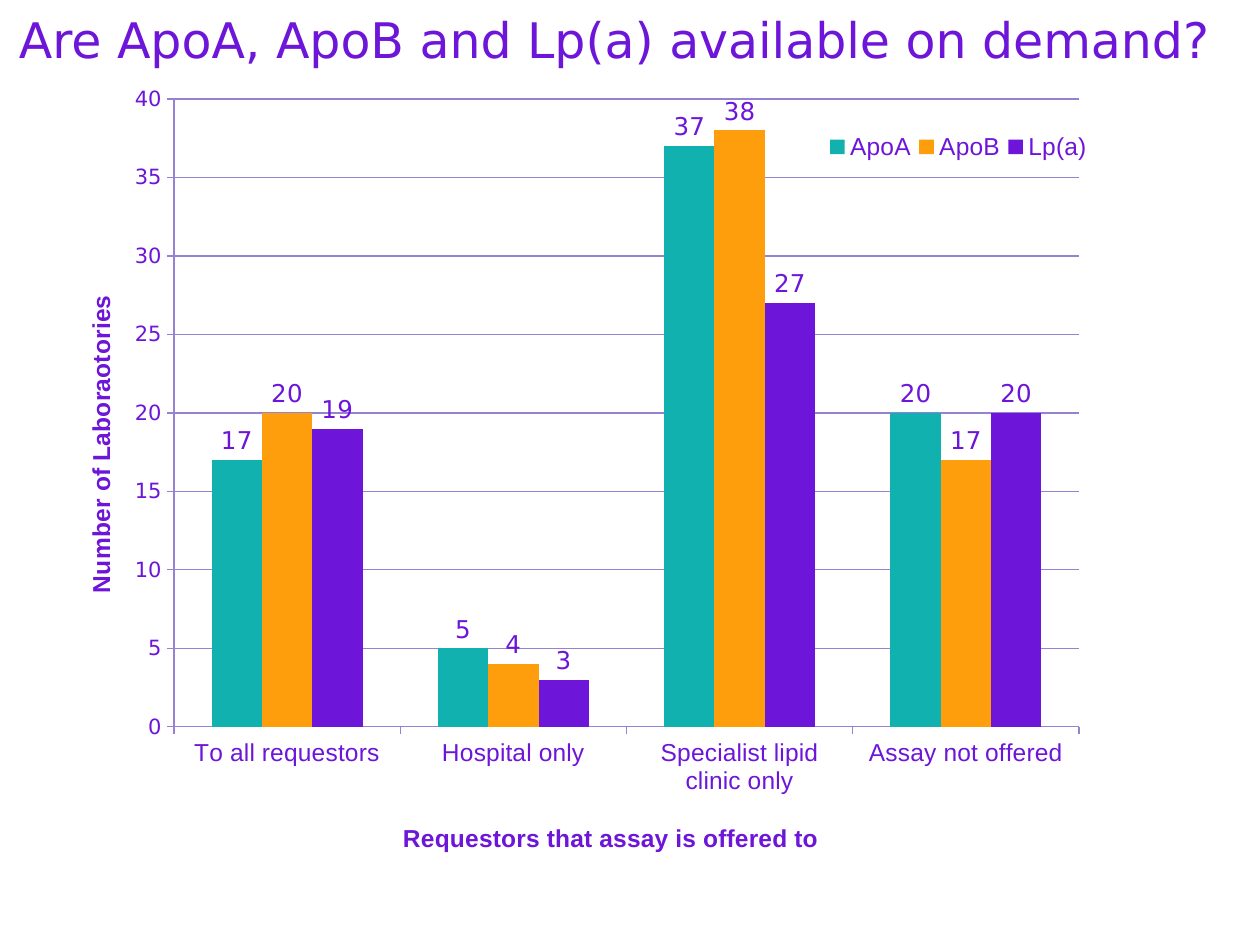
from lxml import etree
from pptx import Presentation
from pptx import util as u
from pptx.chart import data
from pptx.dml.color import RGBColor
from pptx.enum import chart as ch, text
from pptx.oxml.ns import qn

PURPLE, TEAL, ORANGE, GRID = "6D15D8", "10B1AE", "FF9E0C", "9582D3"


def rgb(value):
    return RGBColor.from_string(value)


def place(parent, **values):
    """Give a chart part a manual position, as fractions of the chart."""
    layout = parent.get_or_add_layout() if hasattr(parent, "get_or_add_layout") else parent.find(qn("c:layout"))
    if layout is None:
        layout = etree.Element(qn("c:layout"))
        before = [e for e in parent if e.tag in (qn("c:tx"), qn("c:legendPos"))]
        parent.insert(len(before), layout)
    for child in list(layout):
        layout.remove(child)
    manual = etree.SubElement(layout, qn("c:manualLayout"))
    for name, value in values.items():
        etree.SubElement(manual, qn("c:" + name)).set("val", str(value))


class Deck:
    body, label = "DejaVu Sans", "Arial"

    def __init__(self, width, height):
        self.prs = Presentation()
        self.prs.slide_width, self.prs.slide_height = u.Pt(width), u.Pt(height)
        self.s = self.prs.slides.add_slide(self.prs.slide_layouts[6])

    def font(self, f, size, name=None, bold=False):
        for key, value in dict(size=u.Pt(size), name=name or self.body, bold=bold).items():
            setattr(f, key, value)
        f.color.rgb = rgb(PURPLE)

    def title(self, words, *box):
        tf = self.s.shapes.add_textbox(*map(u.Pt, box)).text_frame
        style = dict(margin_left=0, margin_top=0, margin_right=0, margin_bottom=0,
                     word_wrap=True, vertical_anchor=text.MSO_ANCHOR.TOP)
        for key, value in style.items():
            setattr(tf, key, value)
        p = tf.paragraphs[0]
        p.line_spacing = 0.92
        r = p.add_run()
        r.text = words
        self.font(r.font, 28)

    def axis(self, axis, words, size, name, x, y):
        axis.major_tick_mark = ch.XL_TICK_MARK.OUTSIDE
        axis.format.line.color.rgb = rgb(GRID)
        axis.format.line.width = u.Pt(0.75)
        self.font(axis.tick_labels.font, size, name)
        tf = axis.axis_title.text_frame
        tf.text = words
        self.font(tf.paragraphs[0].runs[0].font, 14, self.label, True)
        place(axis.axis_title._element, xMode="edge", yMode="edge", x=x, y=y)

    def columns(self, cats, series, *box):
        cd = data.CategoryChartData()
        cd.categories = cats
        for name, values, _ in series:
            cd.add_series(name, values)
        c = self.s.shapes.add_chart(ch.XL_CHART_TYPE.COLUMN_CLUSTERED, *map(u.Pt, box), cd).chart
        c.has_title = False
        self.font(c.font, 12)

        # Columns and their values
        plot = c.plots[0]
        for key, value in dict(gap_width=150, overlap=0, vary_by_categories=False).items():
            setattr(plot, key, value)
        for ser, (_, _, colour) in zip(plot.series, series):
            ser.format.fill.solid()
            ser.format.fill.fore_color.rgb = rgb(colour)
            labels = ser.data_labels
            labels.show_value = True
            labels.position = ch.XL_LABEL_POSITION.OUTSIDE_END
            self.font(labels.font, 14)
        place(c._chartSpace.chart.plotArea, layoutTarget="inner", xMode="edge", yMode="edge",
              x=0.1065, y=0.0355, w=0.78, h=0.781)

        # Axes
        self.axis(c.category_axis, "Requestors that assay is offered to", 14, self.label, 0.3, 0.93)
        va = c.value_axis
        self.axis(va, "Number of Laboraotories", 12, self.body, 0.026, 0.274)
        for key, value in dict(minimum_scale=0, maximum_scale=40, major_unit=5,
                               has_major_gridlines=True).items():
            setattr(va, key, value)
        va.major_gridlines.format.line.color.rgb = rgb(GRID)
        va.major_gridlines.format.line.width = u.Pt(0.75)

        # Legend
        c.has_legend = True
        c.legend.position = ch.XL_LEGEND_POSITION.RIGHT
        c.legend.include_in_layout = True
        self.font(c.legend.font, 14, self.label)
        place(c.legend._element, xMode="edge", yMode="edge", x=0.665, y=0.07, w=0.235, h=0.05)


def main():
    deck = Deck(720, 540)
    deck.title("Are ApoA, ApoB and Lp(a) available on demand?", 10.8, 8.64, 700.56, 53.28)
    deck.columns(
        ["To all requestors", "Hospital only", "Specialist lipid clinic only", "Assay not offered"],
        [("ApoA", (17, 5, 37, 20), TEAL),
         ("ApoB", (20, 4, 38, 17), ORANGE),
         ("Lp(a)", (19, 3, 27, 20), PURPLE)],
        28.8, 40.32, 663.12, 459.36)
    deck.prs.save("out.pptx")


if __name__ == "__main__":
    main()
